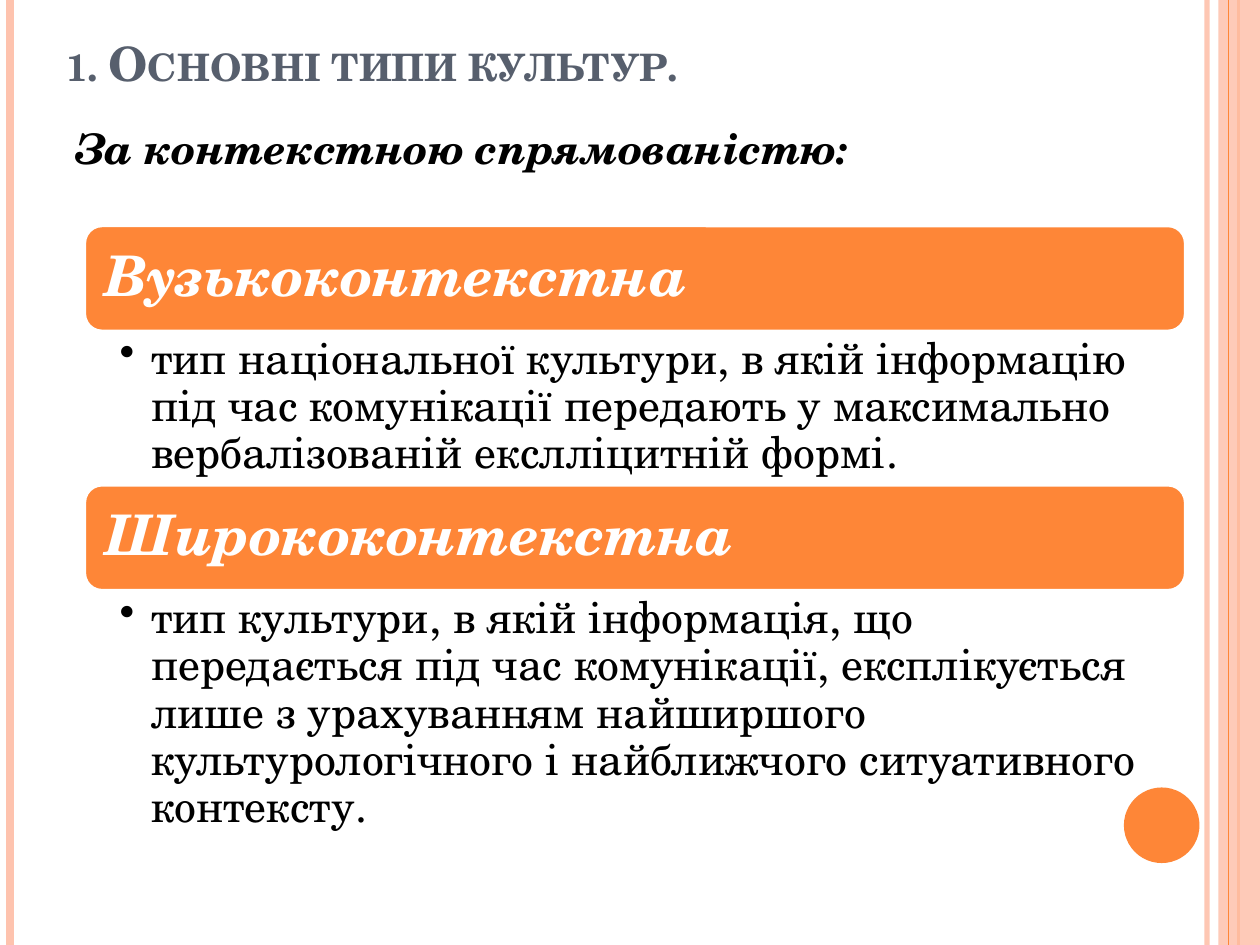
from dataclasses import dataclass

from lxml import etree
from pptx import Presentation
from pptx import util as u
from pptx.dml.color import RGBColor
from pptx.enum import shapes, text
from pptx.oxml.ns import qn

WIDE, HIGH = 10, 7.5


@dataclass(frozen=True)
class Theme:
    face: str = "TeX Gyre Schola"
    accent: str = "FE8637"
    pale: str = "FEC3AE"
    slate: str = "575F6D"
    ink: str = "000000"
    paper: str = "FFFFFF"
    title: float = 27
    lead: float = 24
    head: float = 32
    body: float = 25


T = Theme()


def rgb(code):
    return RGBColor.from_string(code)


def fade(fill, share):
    """Make a solid fill partly opaque, share in percent."""
    tint = fill._xPr.find(qn("a:solidFill"))[0]
    etree.SubElement(tint, qn("a:alpha"), val=str(share * 1000))


def rule(slide, x, color, width, share=100):
    """Draw a full-height vertical line."""
    line = slide.shapes.add_connector(
        shapes.MSO_CONNECTOR.STRAIGHT, u.Inches(x), 0, u.Inches(x), u.Inches(HIGH))
    line.line.color.rgb = rgb(color)
    line.line.width = u.Pt(width)
    if share < 100:
        fade(line.line.fill, share)
    etree.SubElement(line._element.spPr, qn("a:effectLst"))


def block(slide, kind, box, color):
    form = slide.shapes.add_shape(kind, *map(u.Inches, box))
    form.shadow.inherit = False
    form.fill.solid()
    form.fill.fore_color.rgb = rgb(color)
    form.line.fill.background()
    return form


def write(form, words, size, color, bold=False, slant=False,
          pads=(0.1, 0.05, 0.1, 0.05), anchor=text.MSO_ANCHOR.TOP):
    """Fill a shape with one left-aligned paragraph and return it."""
    frame = form.text_frame
    frame.word_wrap = True
    frame.vertical_anchor = anchor
    (frame.margin_left, frame.margin_top,
     frame.margin_right, frame.margin_bottom) = map(u.Inches, pads)
    para = frame.paragraphs[0]
    para.text = words
    para.alignment = text.PP_ALIGN.LEFT
    font = para.font
    font.name, font.size = T.face, u.Pt(size)
    font.bold, font.italic = bold, slant
    font.color.rgb = rgb(color)
    return para


def label(slide, box, *args, **opts):
    form = slide.shapes.add_textbox(*map(u.Inches, box))
    return write(form, *args, **opts)


def bullet(para, indent):
    props = para._p.get_or_add_pPr()
    props.set("marL", str(u.Inches(indent)))
    props.set("indent", str(-u.Inches(indent)))
    mark = etree.Element(qn("a:buChar"), char="•")
    props.insert_element_before(mark, "a:tabLst", "a:defRPr", "a:extLst")


def frame(slide):
    """Draw the edge lines, the right band and the dot."""
    rule(slide, WIDE * 0.958, T.pale, 3, 93)
    rule(slide, WIDE * 0.008, T.pale, 4.5)
    rule(slide, WIDE * 0.983, T.accent, 1.5)
    kinds = shapes.MSO_SHAPE
    left = WIDE * 0.967
    band = block(slide, kinds.RECTANGLE, (left, 0, WIDE - left, HIGH), T.pale)
    fade(band.fill, 87)
    rule(slide, WIDE * 0.975, T.accent, 0.75)
    block(slide, kinds.OVAL, (8.92, 6.25, 0.6, 0.6), T.accent)


def heading(slide, box):
    x, y, wide, high = box
    para = label(slide, (x, y, wide, high * 0.5), "1. Основні типи культур.",
                 T.title, T.slate, bold=True, anchor=text.MSO_ANCHOR.BOTTOM)
    para.runs[0]._r.get_or_add_rPr().set("cap", "small")
    lead = label(slide, (x + 0.08, y + 0.71, wide, high * 0.5),
                 "За контекстною спрямованістю:", T.lead, T.ink,
                 bold=True, slant=True)
    lead.space_before = u.Pt(6)


def section(slide, box, name, note):
    """Place a rounded bar with a bulleted note below it."""
    x, y, wide, high = box
    bar = 0.84
    form = block(slide, shapes.MSO_SHAPE.ROUNDED_RECTANGLE,
                 (x, y, wide, bar), T.accent)
    form.line.color.rgb = rgb(T.paper)
    form.line.width = u.Pt(2)
    head = write(form, name, T.head, T.paper, bold=True, slant=True,
                 pads=(0.13,) * 4, anchor=text.MSO_ANCHOR.MIDDLE)
    para = label(slide, (x, y + bar, wide, high - bar), note, T.body, T.ink,
                 pads=(0.28, 0.04, 0.25, 0.04))
    head.line_spacing = para.line_spacing = 0.9
    bullet(para, 0.25)


def types(slide, box):
    """Stack the two culture types in the box."""
    x, y, wide, high = box
    parts = (
        (0.42, "Вузькоконтекстна",
         "тип національної культури, в якій інформацію під час комунікації "
         "передають у максимально вербалізованій екслліцитній формі."),
        (0.58, "Ширококонтекстна",
         "тип культури, в якій інформація, що передається під час комунікації, "
         "експлікується лише з урахуванням найширшого культурологічного "
         "і найближчого ситуативного контексту."),
    )
    for share, name, note in parts:
        section(slide, (x, y, wide, high * share), name, note)
        y += high * share


def main():
    deck = Presentation()
    deck.slide_width, deck.slide_height = u.Inches(WIDE), u.Inches(HIGH)
    slide = deck.slides.add_slide(deck.slide_layouts[6])
    frame(slide)
    heading(slide, (0.43, 0.21, 8.17, 1.12))
    types(slide, (0.67, 1.79, 8.74, 4.9))
    deck.save("out.pptx")


if __name__ == "__main__":
    main()
